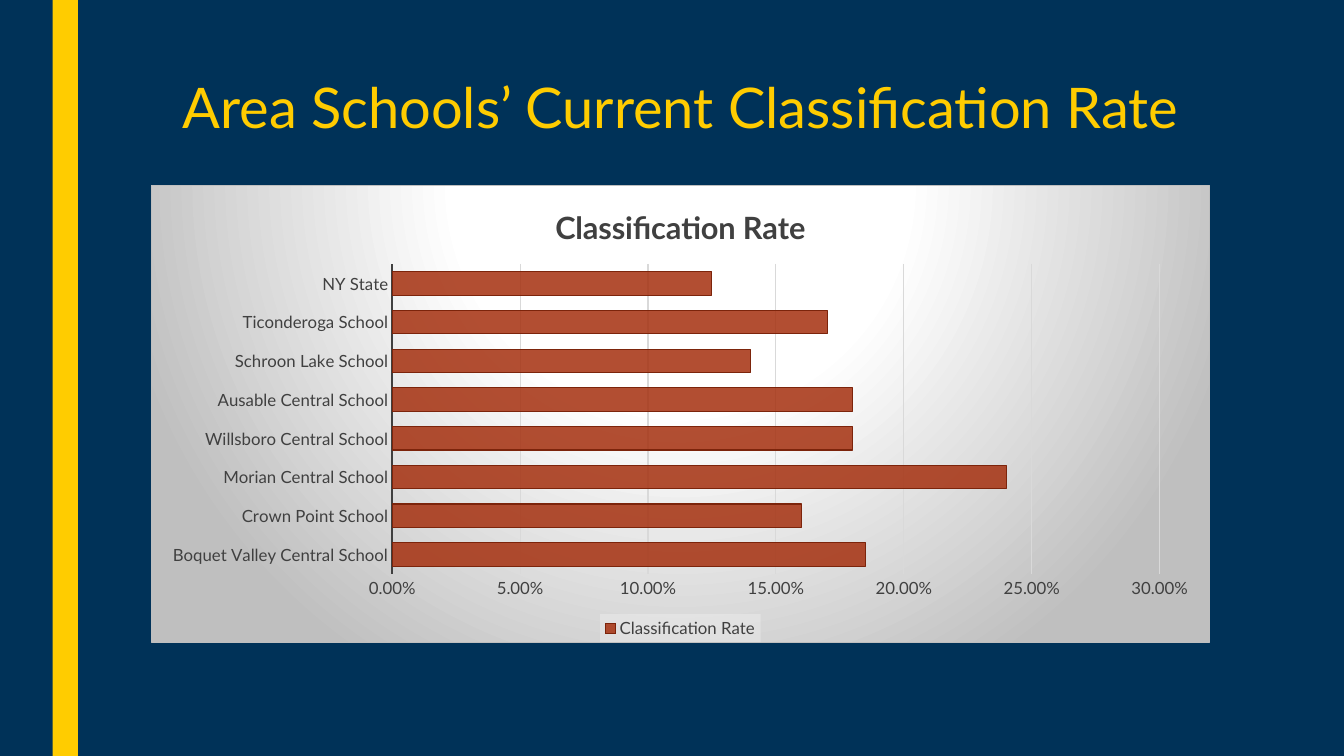
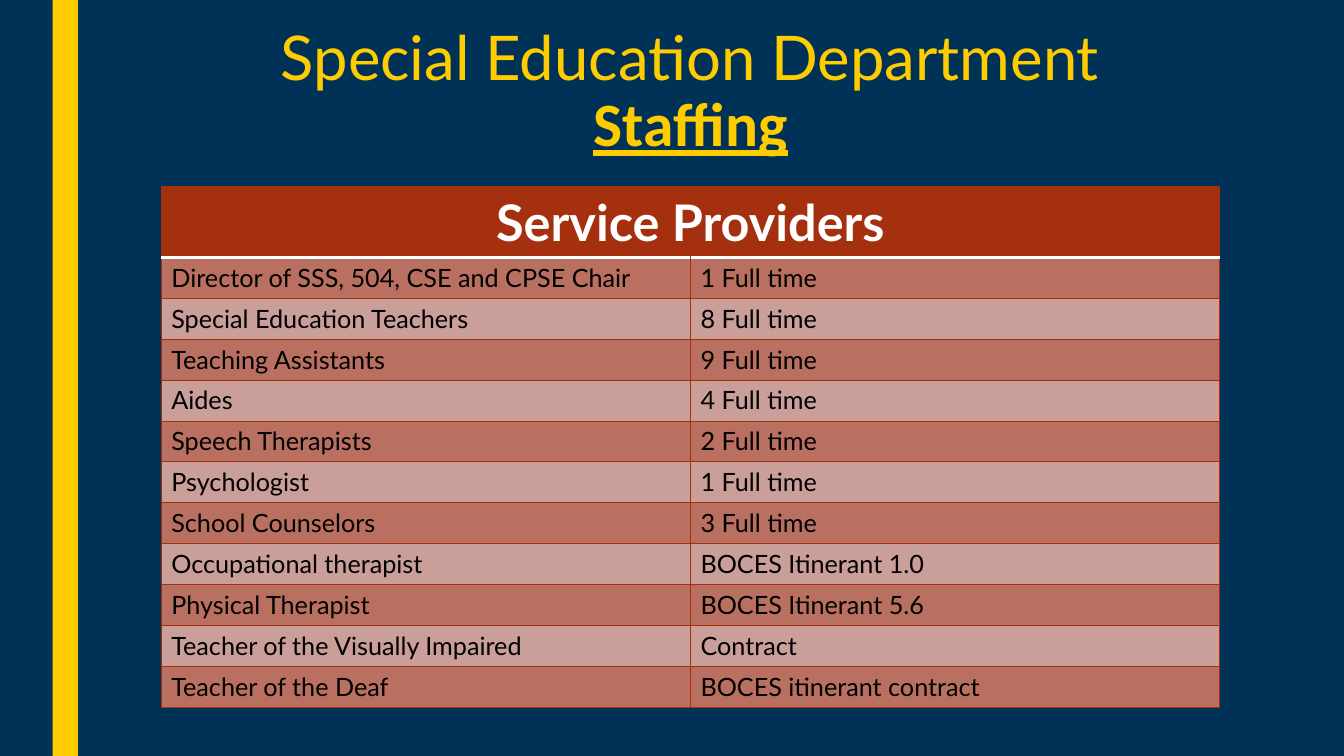
"""Build two slides on special education: classification rates and staffing."""
from lxml import etree
from pptx import Presentation
from pptx.chart.data import CategoryChartData
from pptx.dml.color import RGBColor
from pptx.enum import chart as ch, shapes, text
from pptx.oxml import parse_xml
from pptx.oxml.ns import qn
from pptx.util import Pt

NAVY, GOLD, RUST, DARK_RUST = "003258", "FFCC00", "A5300F", "7C240B"
ROW_DARK, ROW_LIGHT = "BA7061", "CA9E99"
WHITE, BLACK, CHARCOAL = "FFFFFF", "000000", "404040"
GRID, SILVER, PALE = "D9D9D9", "BFBFBF", "F2F2F2"
FONT = "Lato"
NS = ('xmlns:a="http://schemas.openxmlformats.org/drawingml/2006/main" '
      'xmlns:c="http://schemas.openxmlformats.org/drawingml/2006/chart"')
CONTENT_W = 756
TITLE_H = 116.64

RATE_TITLE = [("Area Schools’ Current Classification Rate", 40, FONT, False)]
RATE_NAME = "Classification Rate"
RATES = [
    ("Boquet Valley Central School", 0.185),
    ("Crown Point School", 0.16),
    ("Morian Central School", 0.24),
    ("Willsboro Central School", 0.18),
    ("Ausable Central School", 0.18),
    ("Schroon Lake School", 0.14),
    ("Ticonderoga School", 0.17),
    ("NY State", 0.125),
]
STAFF_TITLE = [("Special Education Department", 44, FONT, False),
               ("Staffing", 44, "Calibri", True)]
STAFF_HEADING = "Service Providers"
STAFF = [
    ("Director of SSS, 504, CSE and CPSE Chair", "1 Full time"),
    ("Special Education Teachers", "8 Full time"),
    ("Teaching Assistants", "9 Full time"),
    ("Aides", "4 Full time"),
    ("Speech Therapists", "2 Full time"),
    ("Psychologist", "1 Full time"),
    ("School Counselors", "3 Full time"),
    ("Occupational therapist", "BOCES Itinerant 1.0"),
    ("Physical Therapist", "BOCES Itinerant 5.6"),
    ("Teacher of the Visually Impaired", "Contract"),
    ("Teacher of the Deaf", "BOCES itinerant contract"),
]


def rgb(value):
    return RGBColor.from_string(value)


def style(font, size, color, name=FONT, bold=False):
    font.size, font.name, font.bold = Pt(size), name, bold
    font.color.rgb = rgb(color)


def outline(line, color, width):
    line.color.rgb = rgb(color)
    line.width = Pt(width)


def fade(fill_owner, percent):
    color = next(fill_owner.iter(qn("a:srgbClr")))
    etree.SubElement(color, qn("a:alpha")).set("val", str(percent * 1000))


def add_band(prs, slide):
    """Draw the gold band and place it on the master, behind everything."""
    band = slide.shapes.add_shape(shapes.MSO_SHAPE.RECTANGLE,
                                  Pt(37.6), 0, Pt(18), prs.slide_height)
    band.shadow.inherit = False
    band.fill.solid()
    band.fill.fore_color.rgb = rgb(GOLD)
    band.line.fill.background()
    band.element.nvSpPr.cNvPr.set("id", "20")
    prs.slide_master.shapes.element.insert(2, band.element)


def add_titled_slide(prs, lines, left, top):
    slide = prs.slides.add_slide(prs.slide_layouts[5])
    title = slide.shapes.title
    title.left, title.top = Pt(left), Pt(top)
    title.width, title.height = Pt(CONTENT_W), Pt(TITLE_H)
    frame = title.text_frame
    frame.word_wrap = True
    frame.auto_size = text.MSO_AUTO_SIZE.NONE
    frame.vertical_anchor = text.MSO_ANCHOR.TOP
    para = frame.paragraphs[0]
    para.alignment = text.PP_ALIGN.CENTER
    para.line_spacing = 0.89
    for i, (words, size, name, strong) in enumerate(lines):
        if i:
            para.add_line_break()
        run = para.add_run()
        run.text = words
        style(run.font, size, GOLD, name, strong)
        run.font.underline = strong
    return slide


def add_rates(slide):
    data = CategoryChartData(number_format="0.00%")
    data.categories = [school for school, _ in RATES]
    data.add_series(RATE_NAME, [rate for _, rate in RATES])
    chart = slide.shapes.add_chart(ch.XL_CHART_TYPE.BAR_CLUSTERED, Pt(108), Pt(132),
                                   Pt(CONTENT_W), Pt(327), data).chart
    style(chart.font, 10, BLACK)
    chart.has_title = True
    heading = chart.chart_title.text_frame.paragraphs[0].add_run()
    heading.text = RATE_NAME
    style(heading.font, 22, CHARCOAL, bold=True)
    chart.chart_title.include_in_layout = False

    plot = chart.plots[0]
    plot.gap_width = 65
    plot.vary_by_categories = False
    bars = plot.series[0]
    bars.invert_if_negative = False
    bars.format.fill.solid()
    bars.format.fill.fore_color.rgb = rgb(RUST)
    fade(bars.format.fill.fore_color and bars._element.spPr, 85)
    outline(bars.format.line, DARK_RUST, 0.75)

    schools, percents = chart.category_axis, chart.value_axis
    for axis in (schools, percents):
        axis.major_tick_mark = axis.minor_tick_mark = ch.XL_TICK_MARK.NONE
        style(axis.tick_labels.font, 12, CHARCOAL)
    outline(schools.format.line, CHARCOAL, 1.5)
    percents.format.line.fill.background()
    percents.minimum_scale, percents.maximum_scale, percents.major_unit = 0, 0.3, 0.05
    percents.tick_labels.number_format = "0.00%"
    percents.tick_labels.number_format_is_linked = False
    outline(percents.major_gridlines.format.line, GRID, 0.75)

    chart.has_legend = True
    legend = chart.legend
    legend.position = ch.XL_LEGEND_POSITION.BOTTOM
    legend.include_in_layout = False
    style(legend.font, 12, CHARCOAL)
    backing = parse_xml(f'<c:spPr {NS}><a:solidFill><a:srgbClr val="{PALE}"/>'
                        '</a:solidFill></c:spPr>')
    fade(backing, 39)
    legend._element.find(qn("c:txPr")).addprevious(backing)

    stops = "".join(f'<a:gs pos="{at * 1000}"><a:srgbClr val="{color}"/></a:gs>'
                    for at, color in ((0, WHITE), (39, WHITE), (100, SILVER)))
    chart.element.find(qn("c:txPr")).addprevious(parse_xml(
        f'<c:spPr {NS}><a:gradFill><a:gsLst>{stops}</a:gsLst><a:path path="circle">'
        '<a:fillToRect l="50000" t="-80000" r="50000" b="180000"/></a:path></a:gradFill>'
        f'<a:ln w="{Pt(0.75)}"><a:solidFill><a:srgbClr val="{SILVER}"/></a:solidFill>'
        '</a:ln></c:spPr>'))


def format_cell(cell, fill, rules):
    """Give a cell its borders (left, right, top, bottom) and its fill."""
    props = cell._tc.get_or_add_tcPr()
    for side, (color, width) in zip("LRTB", rules):
        props.append(parse_xml(
            f'<a:ln{side} {NS} w="{Pt(width)}"><a:solidFill><a:srgbClr val="{color}"/>'
            f'</a:solidFill></a:ln{side}>'))
    cell.fill.solid()
    cell.fill.fore_color.rgb = rgb(fill)


def write_cell(cell, words, size, color, bold=False):
    run = cell.text_frame.paragraphs[0].add_run()
    run.text = words
    style(run.font, size, color, bold=bold)


def add_staff(slide):
    heading_h, row_h = 50, 29.2
    table = slide.shapes.add_table(len(STAFF) + 1, 2, Pt(115.2), Pt(133.4), Pt(CONTENT_W),
                                   Pt(heading_h + row_h * len(STAFF))).table
    table.horz_banding = False
    thin, thick = (RUST, 0.5), (WHITE, 2.75)
    for i, row in enumerate(table.rows):
        row.height = Pt(row_h if i else heading_h)
        fill = (ROW_DARK if i % 2 else ROW_LIGHT) if i else RUST
        rules = (thin, thin, thick if i == 1 else thin, thin if i else thick)
        for cell in row.cells:
            format_cell(cell, fill, rules)
    heading = table.cell(0, 0)
    heading.merge(table.cell(0, 1))
    write_cell(heading, STAFF_HEADING, 36, WHITE, True)
    heading.text_frame.paragraphs[0].alignment = text.PP_ALIGN.CENTER
    for i, entry in enumerate(STAFF, 1):
        for j, words in enumerate(entry):
            write_cell(table.cell(i, j), words, 18, BLACK)


def main():
    prs = Presentation()
    prs.slide_width, prs.slide_height = Pt(960), Pt(540)
    backdrop = prs.slide_master.background.fill
    backdrop.solid()
    backdrop.fore_color.rgb = rgb(NAVY)
    rates = add_titled_slide(prs, RATE_TITLE, 108, 54)
    add_band(prs, rates)
    add_rates(rates)
    add_staff(add_titled_slide(prs, STAFF_TITLE, 115.2, 16.6))
    prs.save("out.pptx")


if __name__ == "__main__":
    main()
